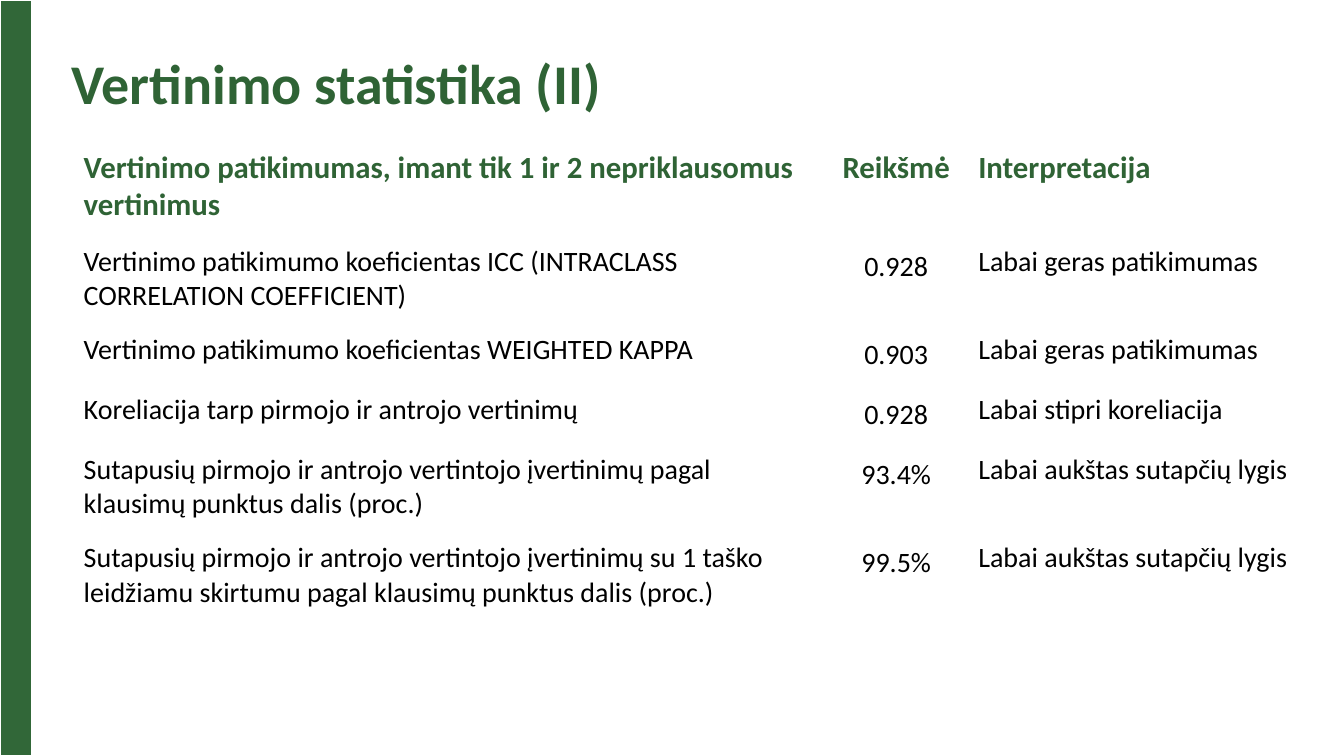
from pptx import Presentation
from pptx.dml.color import RGBColor
from pptx.enum import text
from pptx.util import Pt

BAND_GREEN = RGBColor(0x31, 0x67, 0x38)
TEXT_GREEN = RGBColor(0x2F, 0x63, 0x35)
BLACK = RGBColor(0, 0, 0)
FONT = "Calibri"
SLIDE_WIDTH, SLIDE_HEIGHT = 960, 540

COLUMN_WIDTHS = [536.2, 102.8, 248.6]
HEADER_HEIGHT, ONE_LINE, TWO_LINES = 37.4, 35.2, 49
HEADER = ("Vertinimo patikimumas, imant tik 1 ir 2 nepriklausomus vertinimus",
          "Reikšmė", "Interpretacija")
# Height, measure, value, interpretation
STATISTICS = [
    (TWO_LINES, "Vertinimo patikimumo koeficientas ICC (INTRACLASS CORRELATION COEFFICIENT)",
     "0.928", "Labai geras patikimumas"),
    (ONE_LINE, "Vertinimo patikimumo koeficientas WEIGHTED KAPPA",
     "0.903", "Labai geras patikimumas"),
    (ONE_LINE, "Koreliacija tarp pirmojo ir antrojo vertinimų",
     "0.928", "Labai stipri koreliacija"),
    (TWO_LINES, "Sutapusių pirmojo ir antrojo vertintojo įvertinimų pagal klausimų "
     "punktus dalis (proc.)", "93.4%", "Labai aukštas sutapčių lygis"),
    (TWO_LINES, "Sutapusių pirmojo ir antrojo vertintojo įvertinimų su 1 taško "
     "leidžiamu skirtumu pagal klausimų punktus dalis (proc.)",
     "99.5%", "Labai aukštas sutapčių lygis"),
]


def add_span(para, words, size, color, bold):
    span = para.add_run()
    span.text = words
    span.font.name, span.font.size, span.font.bold = FONT, Pt(size), bold
    span.font.color.rgb = color


def add_plain_table(page, left, top, widths, heights):
    table = page.shapes.add_table(len(heights), len(widths), Pt(left), Pt(top),
                                  Pt(sum(widths)), Pt(sum(heights))).table
    table.first_row = table.horz_banding = False
    for column, width in zip(table.columns, widths):
        column.width = Pt(width)
    for row, height in zip(table.rows, heights):
        row.height = Pt(height)
    return table


# Green band: a table of one filled cell
def add_side_band(page, left, top, width, height):
    cell = add_plain_table(page, left, top, [width], [height]).cell(0, 0)
    cell.fill.solid()
    cell.fill.fore_color.rgb = BAND_GREEN


def set_title(page, words, left, top, width, height):
    title = page.shapes.title
    title.left, title.top, title.width, title.height = map(Pt, (left, top, width, height))
    frame = title.text_frame
    frame.word_wrap = True
    frame.auto_size = text.MSO_AUTO_SIZE.NONE
    frame.vertical_anchor = text.MSO_ANCHOR.MIDDLE
    para = frame.paragraphs[0]
    para.alignment = text.PP_ALIGN.LEFT
    para.line_spacing = 0.9
    add_span(para, words, 40, TEXT_GREEN, True)


def fill_cell(cell, words, is_header, is_value):
    cell.fill.background()
    cell.margin_left = cell.margin_right = Pt(7.2)
    cell.margin_top = cell.margin_bottom = Pt(7.2)
    para = cell.text_frame.paragraphs[0]
    para.alignment = text.PP_ALIGN.CENTER if is_value else text.PP_ALIGN.LEFT
    if is_value and not is_header:
        para.line_spacing = 1.15
    add_span(para, words, 22 if is_header else 20,
             TEXT_GREEN if is_header else BLACK, is_header)


# Statistics: header row, then one row per measure
def add_statistics(page, left, top):
    rows = [(HEADER_HEIGHT, *HEADER), *STATISTICS]
    table = add_plain_table(page, left, top, COLUMN_WIDTHS, [row[0] for row in rows])
    for i, (_, *entries) in enumerate(rows):
        for j, words in enumerate(entries):
            fill_cell(table.cell(i, j), words, is_header=i == 0, is_value=j == 1)


def main():
    deck = Presentation()
    deck.slide_width, deck.slide_height = Pt(SLIDE_WIDTH), Pt(SLIDE_HEIGHT)
    page = deck.slides.add_slide(deck.slide_layouts[5])  # Title Only
    add_side_band(page, 0, 0, 22.3, SLIDE_HEIGHT)
    set_title(page, "Vertinimo statistika (II)", 44, 9.4, 828, 104.4)
    add_statistics(page, 52.6, 99.4)
    deck.save("out.pptx")


if __name__ == "__main__":
    main()
